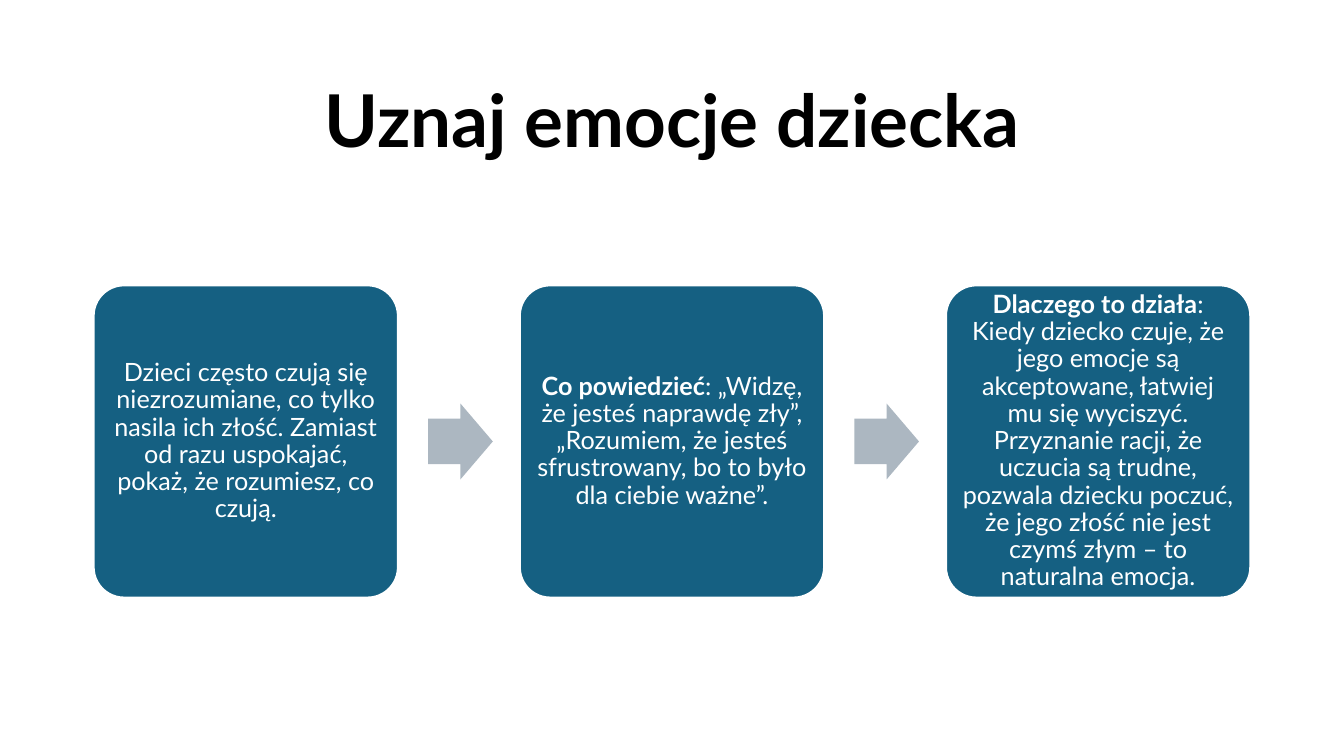
import pptx
import pptx.dml.color
import pptx.enum.shapes
import pptx.enum.text
import pptx.util

Cm = pptx.util.Cm
Shapes = pptx.enum.shapes.MSO_SHAPE

CARDS = [
    ("", "Dzieci często czują się niezrozumiane, co tylko nasila ich złość. "
         "Zamiast od razu uspokajać, pokaż, że rozumiesz, co czują."),
    ("Co powiedzieć", ": „Widzę, że jesteś naprawdę zły”, „Rozumiem, że jesteś "
                      "sfrustrowany, bo to było dla ciebie ważne”."),
    ("Dlaczego to działa", ": Kiedy dziecko czuje, że jego emocje są akceptowane, "
                           "łatwiej mu się wyciszyć. Przyznanie racji, że uczucia są "
                           "trudne, pozwala dziecku poczuć, że jego złość nie jest "
                           "czymś złym – to naturalna emocja."),
]


def color(value):
    return pptx.dml.color.RGBColor.from_string(value)


def apply(target, values):
    for name, value in values.items():
        setattr(target, name, value)


class SlideBuilder:
    font = "Lato"
    card_fill = "156082"
    arrow_fill = "ACB7C1"
    white = "FFFFFF"
    black = "000000"

    def __init__(self, slide):
        self.slide = slide

    def fill_text(self, shape, runs, size, text_color, inset):
        frame = shape.text_frame
        apply(frame, {
            "word_wrap": True,
            "vertical_anchor": pptx.enum.text.MSO_ANCHOR.MIDDLE,
            "margin_left": inset, "margin_right": inset,
            "margin_top": inset, "margin_bottom": inset,
        })
        paragraph = frame.paragraphs[0]
        apply(paragraph, {"alignment": pptx.enum.text.PP_ALIGN.CENTER, "line_spacing": 0.9})
        for text, bold in runs:
            run = paragraph.add_run()
            run.text = text
            apply(run.font, {"name": self.font, "size": pptx.util.Pt(size), "bold": bold})
            run.font.color.rgb = color(text_color)

    def title(self, text, left, top, width, height):
        box = self.slide.shapes.add_textbox(left, top, width, height)
        self.fill_text(box, [(text, True)], 52, self.black, Cm(0.25))

    def block(self, kind, fill, adjustments, left, top, width, height):
        shape = self.slide.shapes.add_shape(kind, left, top, width, height)
        shape.shadow.inherit = False
        shape.fill.solid()
        shape.fill.fore_color.rgb = color(fill)
        shape.line.fill.background()
        for index, value in enumerate(adjustments):
            shape.adjustments[index] = value
        return shape

    def card(self, heading, body, left, top, width, height):
        shape = self.block(Shapes.ROUNDED_RECTANGLE, self.card_fill, [0.1], left, top, width, height)
        shape.line.color.rgb = color(self.white)
        shape.line.width = pptx.util.Pt(1.5)
        runs = [(heading, True)] if heading else []
        self.fill_text(shape, runs + [(body, False)], 18, self.white, Cm(0.18))

    def arrow(self, left, top, width, height):
        self.block(Shapes.RIGHT_ARROW, self.arrow_fill, [0.6, 0.5], left, top, width, height)


def main():
    presentation = pptx.Presentation()
    apply(presentation, {"slide_width": Cm(33.87), "slide_height": Cm(19.05)})
    builder = SlideBuilder(presentation.slides.add_slide(presentation.slide_layouts[6]))
    builder.title("Uznaj emocje dziecka", Cm(2.33), Cm(1.55), Cm(29.21), Cm(3.15))

    first_left, pitch, arrow_offset = 2.36, 10.74, 8.43
    for index, (heading, body) in enumerate(CARDS):
        left = first_left + index * pitch
        builder.card(heading, body, Cm(left), Cm(7.19), Cm(7.67), Cm(7.87))
        if index < len(CARDS) - 1:
            builder.arrow(Cm(left + arrow_offset), Cm(10.17), Cm(1.63), Cm(1.91))

    presentation.save("out.pptx")


if __name__ == "__main__":
    main()
